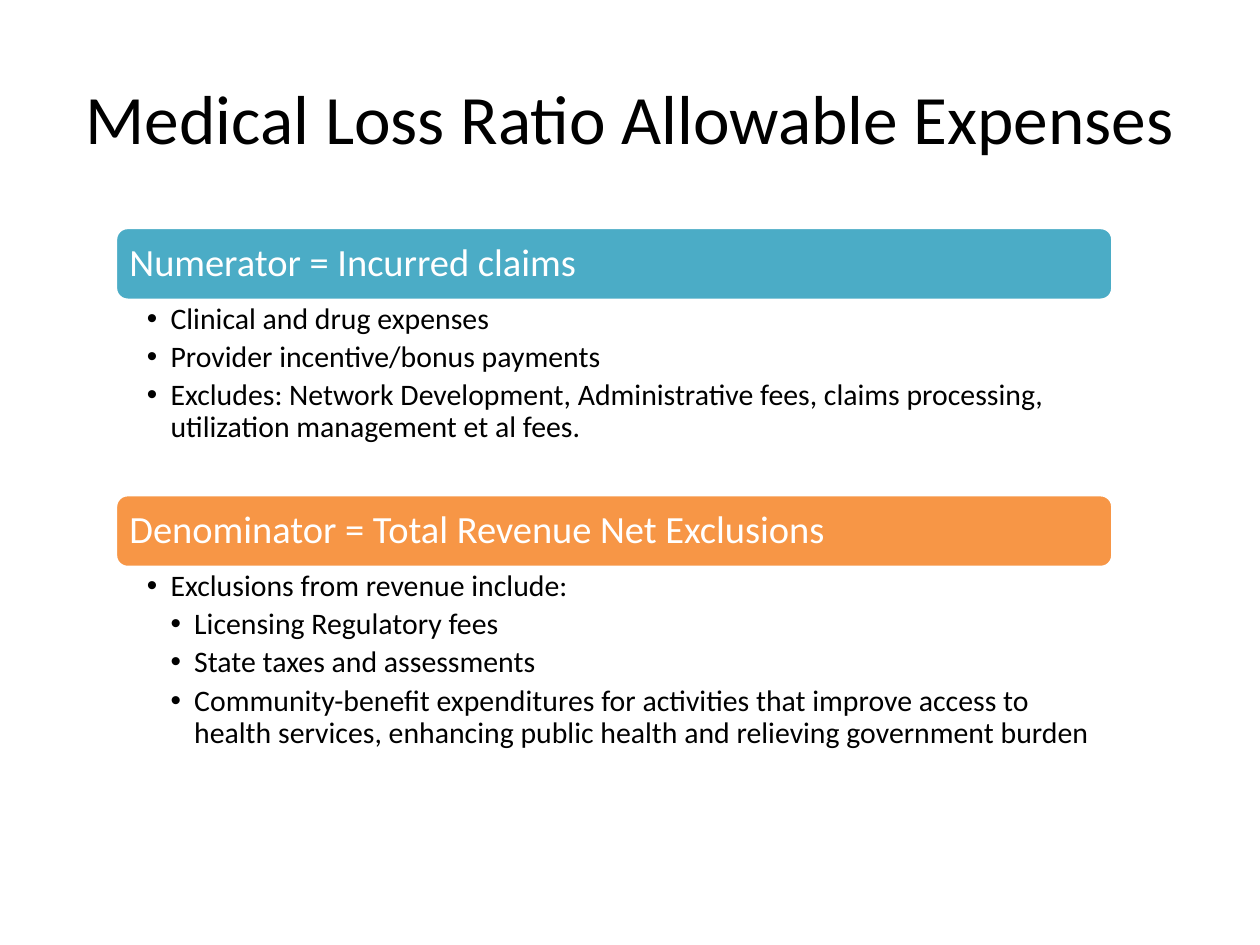
from dataclasses import dataclass

from lxml.etree import SubElement
from pptx import Presentation
from pptx.dml.color import RGBColor
from pptx.enum.shapes import MSO_SHAPE
from pptx.enum.text import MSO_ANCHOR, PP_ALIGN
from pptx.oxml.ns import qn
from pptx.util import Pt


@dataclass(frozen=True)
class Theme:
    font: str = "Calibri"
    ink: RGBColor = RGBColor(0x00, 0x00, 0x00)
    white: RGBColor = RGBColor(0xFF, 0xFF, 0xFF)
    teal: RGBColor = RGBColor(0x4B, 0xAC, 0xC6)
    orange: RGBColor = RGBColor(0xF7, 0x96, 0x46)
    title_size: float = 39.6
    heading_size: float = 22
    body_size: float = 17


THEME = Theme()
HEADING_HEIGHT = 41.6
BULLET_INDENT = 13.5

SECTIONS = [
    ("Numerator = Incurred claims", THEME.teal, [
        (1, "Clinical and drug expenses"),
        (1, "Provider incentive/bonus payments"),
        (1, "Excludes: Network Development, Administrative fees, claims "
            "processing, utilization management et al fees."),
    ]),
    ("Denominator = Total Revenue Net Exclusions", THEME.orange, [
        (1, "Exclusions from revenue include:"),
        (2, "Licensing Regulatory fees"),
        (2, "State taxes and assessments"),
        (2, "Community-benefit expenditures for activities that improve "
            "access to health services, enhancing public health and "
            "relieving government burden"),
    ]),
]


def set_frame(frame, anchor, left, top, right, bottom):
    frame.word_wrap = True
    frame.vertical_anchor = anchor
    frame.margin_left, frame.margin_top = Pt(left), Pt(top)
    frame.margin_right, frame.margin_bottom = Pt(right), Pt(bottom)


def write(paragraph, text, size, color, align=PP_ALIGN.LEFT):
    paragraph.text = text
    paragraph.alignment = align
    font = paragraph.font
    font.name, font.size = THEME.font, Pt(size)
    font.color.rgb = color


def add_bullet(paragraph, level):
    paragraph.level = level
    properties = paragraph._p.get_or_add_pPr()
    properties.set("marL", str(Pt(BULLET_INDENT * level)))
    properties.set("indent", str(-Pt(BULLET_INDENT)))
    SubElement(properties, qn("a:buFont"), typeface="Arial")
    SubElement(properties, qn("a:buChar"), char="•")


def add_title(slide, text, left, top, width, height):
    box = slide.shapes.add_textbox(Pt(left), Pt(top), Pt(width), Pt(height))
    set_frame(box.text_frame, MSO_ANCHOR.MIDDLE, 7.2, 3.6, 7.2, 3.6)
    write(box.text_frame.paragraphs[0], text, THEME.title_size, THEME.ink,
          PP_ALIGN.CENTER)


def add_heading(slide, text, color, left, top, width, height):
    bar = slide.shapes.add_shape(MSO_SHAPE.ROUNDED_RECTANGLE, Pt(left), Pt(top),
                                 Pt(width), Pt(height))
    bar.shadow.inherit = False
    bar.fill.solid()
    bar.fill.fore_color.rgb = color
    bar.line.color.rgb = THEME.white
    bar.line.width = Pt(2)
    set_frame(bar.text_frame, MSO_ANCHOR.MIDDLE, 6, 6, 6, 6)
    heading = bar.text_frame.paragraphs[0]
    write(heading, text, THEME.heading_size, THEME.white)
    heading.line_spacing = 0.9


def add_bullet_list(slide, items, left, top, width, height):
    box = slide.shapes.add_textbox(Pt(left), Pt(top), Pt(width), Pt(height))
    frame = box.text_frame
    set_frame(frame, MSO_ANCHOR.TOP, 18, 2, 12, 2)
    for index, (level, text) in enumerate(items):
        item = frame.add_paragraph() if index else frame.paragraphs[0]
        item.line_spacing = 0.9
        item.space_after = Pt(0.2 * THEME.body_size)
        add_bullet(item, level)
        write(item, text, THEME.body_size, THEME.ink)


def add_section(slide, section, left, top, width, height):
    """A coloured heading bar with its bullet list below."""
    heading, color, items = section
    add_heading(slide, heading, color, left, top, width, HEADING_HEIGHT)
    add_bullet_list(slide, items, left, top + HEADING_HEIGHT, width,
                    height - HEADING_HEIGHT)


def main():
    presentation = Presentation()
    presentation.slide_width, presentation.slide_height = Pt(720), Pt(540)
    slide = presentation.slides.add_slide(presentation.slide_layouts[6])
    add_title(slide, "Medical Loss Ratio Allowable Expenses", 36, 21.6, 648, 90)
    section_height = 152.7
    for index, section in enumerate(SECTIONS):
        add_section(slide, section, 66, 130 + index * section_height, 570,
                    section_height)
    presentation.save("out.pptx")


if __name__ == "__main__":
    main()
